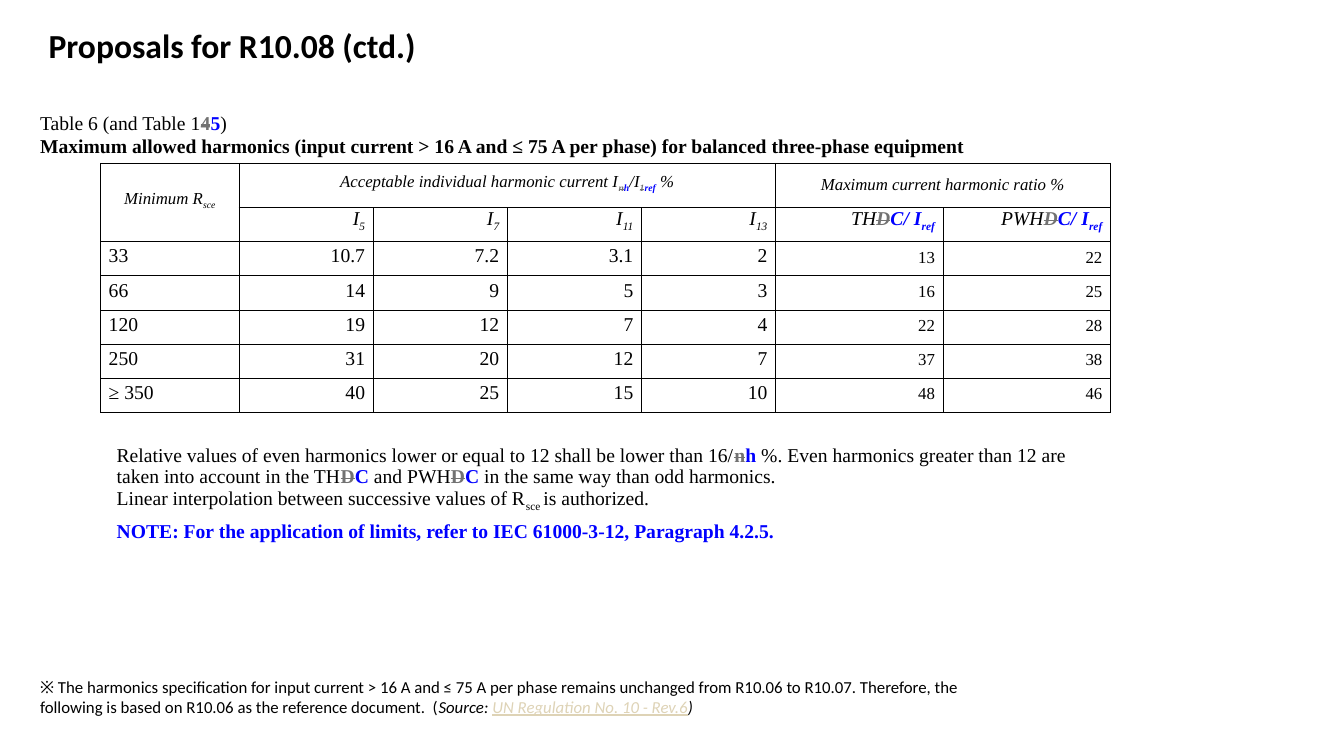
import pptx
import pptx.util
import pptx.dml.color
import pptx.enum.text
import pptx.oxml
import pptx.oxml.ns

Cm, Pt = pptx.util.Cm, pptx.util.Pt
RGBColor = pptx.dml.color.RGBColor
ALIGN = pptx.enum.text.PP_ALIGN
ANCHOR = pptx.enum.text.MSO_ANCHOR

BLACK = RGBColor(0x00, 0x00, 0x00)
GREY = RGBColor(0x72, 0x72, 0x72)
BLUE = RGBColor(0x00, 0x00, 0xFF)
SAND = RGBColor(0xDE, 0xD3, 0xB6)
SERIF, SANS = "Times New Roman", "Calibri"


def add_runs(p, runs, size, font=SERIF):
    """Style letters: b bold, i italic, s subscript, d deleted, n new, u link."""
    for text, style in runs:
        r = p.add_run()
        r.text = text
        f = r.font
        f.name, f.size = font, Pt(size)
        f.bold = any(c in style for c in "bdn")
        f.italic = "i" in style
        f.underline = "u" in style
        f.color.rgb = (GREY if "d" in style else BLUE if "n" in style
                       else SAND if "u" in style else BLACK)
        if "d" in style:
            f._element.set("strike", "sngStrike")
        if "s" in style:
            f._element.set("baseline", "-25000")


def set_borders(cell, visible):
    tcPr = cell._tc.get_or_add_tcPr()
    for side in "LRTB":
        fill = ('<a:solidFill><a:srgbClr val="000000"/></a:solidFill>'
                if side in visible else "<a:noFill/>")
        tcPr.append(pptx.oxml.parse_xml(
            f'<a:ln{side} {pptx.oxml.ns.nsdecls("a")} w="6350">{fill}</a:ln{side}>'))


prs = pptx.Presentation()
prs.slide_width, prs.slide_height = Cm(33.87), Cm(19.05)
s = prs.slides.add_slide(prs.slide_layouts[5])

# Title
title = s.shapes.title
title.left, title.top, title.width, title.height = Cm(0.97), Cm(0.51), Cm(27.05), Cm(1.19)
tf = title.text_frame
tf.vertical_anchor = ANCHOR.TOP
tf.auto_size = pptx.enum.text.MSO_AUTO_SIZE.NONE
p = tf.paragraphs[0]
p.alignment = ALIGN.LEFT
add_runs(p, [("Proposals for R10.08 (ctd.)", "b")], 24, SANS)

# Table caption
tf = s.shapes.add_textbox(Cm(0.76), Cm(2.64), Cm(27.64), Cm(1.55)).text_frame
tf.word_wrap = True
tf.vertical_anchor = ANCHOR.MIDDLE
tf.margin_bottom = Cm(0.2)
add_runs(tf.paragraphs[0],
         [("Table 6 (and Table 1", ""), ("4", "d"), ("5", "n"), (")", "")], 14)
p = tf.add_paragraph()
p.space_after = Pt(6)
add_runs(p, [("Maximum allowed harmonics (input current > 16 A and ≤ 75 A per phase) "
              "for balanced three-phase equipment", "b")], 14)

# Harmonics table
COL_WIDTHS = [3.48] + [3.38] * 4 + [4.22] * 2
ROW_HEIGHTS = [1.12] + [0.86] * 6 + [4.11]
NOTES_ROW = len(ROW_HEIGHTS) - 1
table = s.shapes.add_table(len(ROW_HEIGHTS), len(COL_WIDTHS), Cm(2.54), Cm(4.11),
                           Cm(sum(COL_WIDTHS)), Cm(sum(ROW_HEIGHTS))).table
table.first_row = table.horz_banding = False
for col, width in zip(table.columns, COL_WIDTHS):
    col.width = Cm(width)
for row, height in zip(table.rows, ROW_HEIGHTS):
    row.height = Cm(height)
for i, row in enumerate(table.rows):
    for cell in row.cells:
        cell.margin_left = cell.margin_right = cell.margin_top = cell.margin_bottom = 0
        cell.vertical_anchor = ANCHOR.MIDDLE
        set_borders(cell, "T" if i == NOTES_ROW else "LRTB")
        cell.fill.background()
for first, last in [((0, 0), (1, 0)), ((0, 1), (0, 4)), ((0, 5), (0, 6)),
                    ((NOTES_ROW, 0), (NOTES_ROW, 6))]:
    table.cell(*first).merge(table.cell(*last))

# Header and value cells: (row, column) -> runs, size, alignment
content = {
    (0, 0): ([("Minimum R", "i"), ("sce", "is")], 12, ALIGN.CENTER),
    (0, 1): ([("Acceptable individual harmonic current I", "i"), ("n", "ids"), ("h", "ins"),
              ("/I", "i"), ("1", "ids"), ("ref", "ins"), (" %", "i")], 12, ALIGN.CENTER),
    (0, 5): ([("Maximum current harmonic ratio %", "i")], 12, ALIGN.CENTER),
}
for j, order in enumerate(["5", "7", "11", "13"], 1):
    content[1, j] = ([("I", "i"), (order, "is")], 14, ALIGN.RIGHT)
for j, ratio in enumerate(["TH", "PWH"], 5):
    content[1, j] = ([(ratio, "i"), ("D", "id"), ("C/ I", "in"), ("ref", "ins")],
                     14, ALIGN.RIGHT)
VALUES = [
    ["33", "10.7", "7.2", "3.1", "2", "13", "22"],
    ["66", "14", "9", "5", "3", "16", "25"],
    ["120", "19", "12", "7", "4", "22", "28"],
    ["250", "31", "20", "12", "7", "37", "38"],
    ["≥ 350", "40", "25", "15", "10", "48", "46"],
]
for i, values in enumerate(VALUES, 2):
    for j, value in enumerate(values):
        content[i, j] = ([(value, "")], 14 if j < 5 else 12,
                         ALIGN.RIGHT if j else ALIGN.LEFT)
INDENT = str(Cm(0.2))
for position, (runs, size, alignment) in content.items():
    p = table.cell(*position).text_frame.paragraphs[0]
    p.alignment = alignment
    p.line_spacing = Pt(12)
    p.space_before = p.space_after = Pt(2)
    pPr = p._p.get_or_add_pPr()
    pPr.set("marL", INDENT)
    pPr.set("marR", INDENT)
    add_runs(p, runs, size)

# Notes in the last table row
NOTES = [
    ([("Relative values of even harmonics lower or equal to 12 shall be lower than 16/", ""),
      ("n", "d"), ("h ", "n"),
      ("%. Even harmonics greater than 12 are taken into account in the TH", ""),
      ("D", "d"), ("C", "n"), (" and PWH", ""), ("D", "d"), ("C", "n"),
      (" in the same way than odd harmonics.", "")], 3, 0),
    ([("Linear interpolation between successive values of R", ""), ("sce ", "s"),
      ("is authorized.", "")], 0, 6),
    ([("NOTE: For the application of limits, refer to IEC 61000-3-12, Paragraph 4.2.5.", "n")],
     0, 6),
]
cell = table.cell(NOTES_ROW, 0)
cell.margin_left = Cm(0.2)
tf = cell.text_frame
for k, (runs, before, after) in enumerate(NOTES):
    p = tf.add_paragraph() if k else tf.paragraphs[0]
    p.space_before, p.space_after = Pt(before), Pt(after)
    pPr = p._p.get_or_add_pPr()
    pPr.set("marL", INDENT)
    pPr.set("marR", INDENT)
    add_runs(p, runs, 14)

# Source note
tf = s.shapes.add_textbox(Cm(0.76), Cm(16.92), Cm(23.88), Cm(1.27)).text_frame
tf.word_wrap = True
add_runs(tf.paragraphs[0], [
    ("※ The harmonics specification for input current > 16 A and ≤ 75 A per phase remains "
     "unchanged from R10.06 to R10.07. Therefore, the following is based on R10.06 as the "
     "reference document.  (", ""),
    ("Source: ", "i"), ("UN Regulation No. 10 - Rev.6", "iu"), (")", "i")], 12, SANS)

prs.save("out.pptx")
